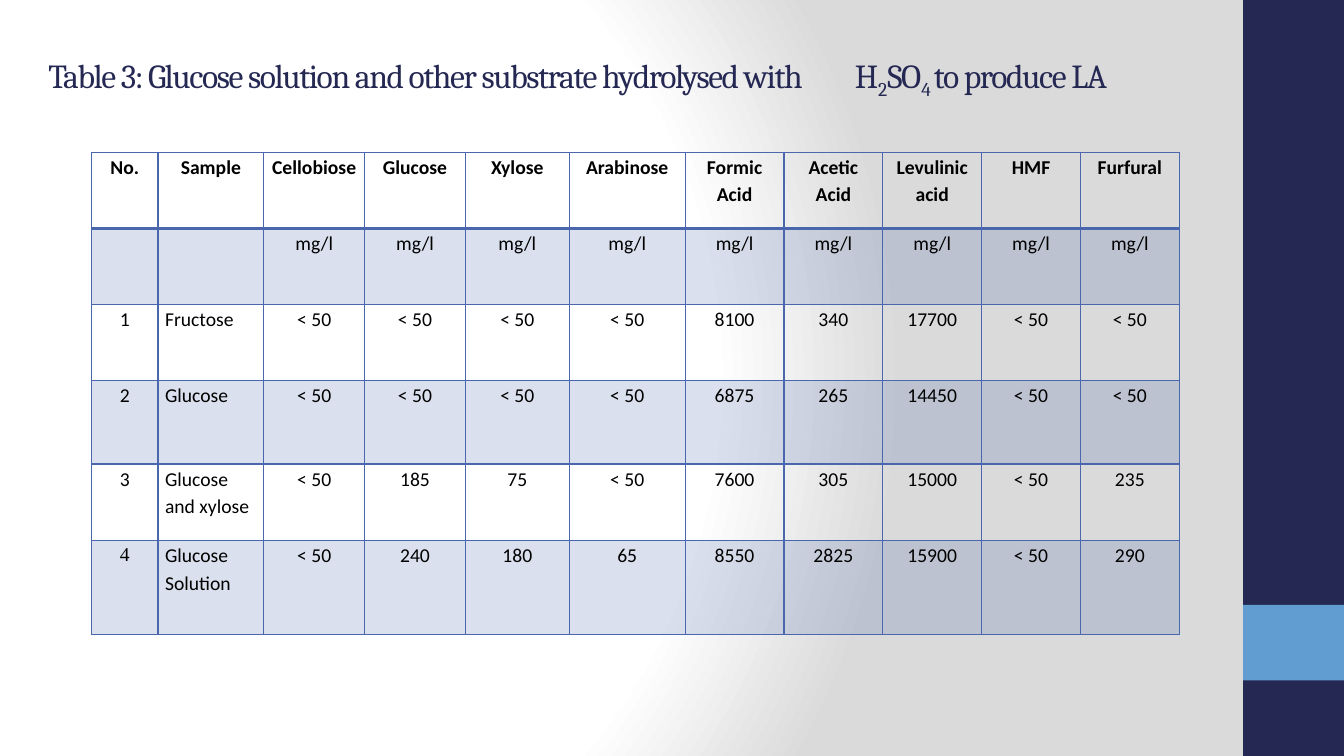
from lxml.etree import SubElement
from pptx import Presentation
from pptx.dml.color import RGBColor
from pptx.enum.shapes import MSO_SHAPE as Shape
from pptx.enum.text import MSO_ANCHOR as Anchor, MSO_AUTO_SIZE as Fit, PP_ALIGN as Align
from pptx.oxml import parse_xml
from pptx.oxml.ns import nsdecls, qn
from pptx.util import Pt

NAVY, SKY, BLUE, BLACK = "242852", "629DD1", "4A66AC", "000000"
LOW = "< 50"

# Title runs: text and baseline shift in percent
TITLE = [
    ("Table 3: Glucose solution and other substrate hydrolysed with \tH", 0),
    ("2", -25), ("SO", 0), ("4 ", -25), ("to produce LA", 0),
]
ROWS = [
    ["No.", "Sample", "Cellobiose", "Glucose", "Xylose", "Arabinose",
     "Formic Acid", "Acetic Acid", "Levulinic acid", "HMF", "Furfural"],
    ["", ""] + ["mg/l"] * 9,
    ["1", "Fructose", LOW, LOW, LOW, LOW, "8100", "340", "17700", LOW, LOW],
    ["2", "Glucose", LOW, LOW, LOW, LOW, "6875", "265", "14450", LOW, LOW],
    ["3", "Glucose and xylose", LOW, "185", "75", LOW, "7600", "305", "15000", LOW, "235"],
    ["4", "Glucose Solution", LOW, "240", "180", "65", "8550", "2825", "15900", LOW, "290"],
]
WIDTHS = [47.5, 75.6, 72, 72, 74.2, 82.8] + [70.6] * 5
HEIGHTS = [54.4, 54.4, 54.4, 59.5, 54.8, 67.3]
BARS = [(0, 540, NAVY), (432, 54, SKY)]  # top, height, colour


def rgb(code):
    return RGBColor.from_string(code)


def set_font(font, name, size, color, bold=False):
    font.name, font.size, font.bold = name, Pt(size), bold
    font.color.rgb = rgb(color)


def add_edge(cell, side, width):
    cell._tc.get_or_add_tcPr().append(parse_xml(
        f'<a:{side} {nsdecls("a")} w="{Pt(width)}"><a:solidFill>'
        f'<a:srgbClr val="{BLUE}"/></a:solidFill></a:{side}>'))


def style_cell(cell, row, col):
    # Borders go before the fill
    edges = {"lnL": 1, "lnR": 1, "lnT": 2 if row == 1 else 1, "lnB": 2 if row == 0 else 1}
    for side, width in edges.items():
        add_edge(cell, side, width)
    if row % 2:
        cell.fill.solid()
        cell.fill.fore_color.rgb = rgb(BLUE)
        tint = cell._tc.tcPr.find(qn("a:solidFill")).find(qn("a:srgbClr"))
        SubElement(tint, qn("a:alpha")).set("val", "20000")
    else:
        cell.fill.background()
    cell.margin_left = cell.margin_right = Pt(5)
    cell.margin_top = cell.margin_bottom = 0
    cell.text = ROWS[row][col]
    para = cell.text_frame.paragraphs[0]
    para.alignment = Align.LEFT if col == 1 and row else Align.CENTER
    para.line_spacing = 1.15
    name = "Times New Roman" if cell.text == "4" else "Calibri"
    set_font(para.font, name, 14, BLACK, row == 0)


def main():
    deck = Presentation()
    deck.slide_width, deck.slide_height = Pt(960), Pt(540)
    slide = deck.slides.add_slide(deck.slide_layouts[5])

    # Background: white fading to grey
    slide.background.fill.gradient()
    grad = next(slide.element.iter(qn("a:gradFill")))
    stops = "".join(f'<a:gs pos="{pos}"><a:srgbClr val="{code}"/></a:gs>' for pos, code in
                    [(0, "FFFFFF"), (75000, "FFFFFF"), (100000, "DADADA")])
    grad.getparent().replace(grad, parse_xml(
        f'<a:gradFill {nsdecls("a")} rotWithShape="1"><a:gsLst>{stops}</a:gsLst>'
        '<a:path path="circle"><a:fillToRect l="20000" t="50000" r="100000" b="50000"/>'
        '</a:path></a:gradFill>'))

    # Side bars
    for top, height, code in BARS:
        bar = slide.shapes.add_shape(Shape.RECTANGLE, Pt(888), Pt(top), Pt(72), Pt(height))
        bar.shadow.inherit = False
        bar.fill.solid()
        bar.fill.fore_color.rgb = rgb(code)
        bar.line.fill.background()

    # Title
    title = slide.shapes.title
    title.left, title.top, title.width, title.height = Pt(27.4), Pt(9.4), Pt(858), Pt(92)
    frame = title.text_frame
    frame.auto_size, frame.word_wrap = Fit.NONE, True
    frame.vertical_anchor = Anchor.MIDDLE
    para = frame.paragraphs[0]
    para.alignment = Align.LEFT
    set_font(para.font, "Cambria", 24, NAVY)
    for text, shift in TITLE:
        run = para.add_run()
        run.text = text
        props = run._r.get_or_add_rPr()
        props.set("spc", "-100")
        if shift:
            props.set("baseline", str(shift * 1000))

    # Table
    table = slide.shapes.add_table(len(ROWS), len(WIDTHS), Pt(65.4), Pt(108.7),
                                   Pt(sum(WIDTHS)), Pt(sum(HEIGHTS))).table
    table.first_row = table.horz_banding = False
    for column, width in zip(table.columns, WIDTHS):
        column.width = Pt(width)
    for row, height in enumerate(HEIGHTS):
        table.rows[row].height = Pt(height)
        for col in range(len(WIDTHS)):
            style_cell(table.cell(row, col), row, col)

    deck.save("out.pptx")


if __name__ == "__main__":
    main()
